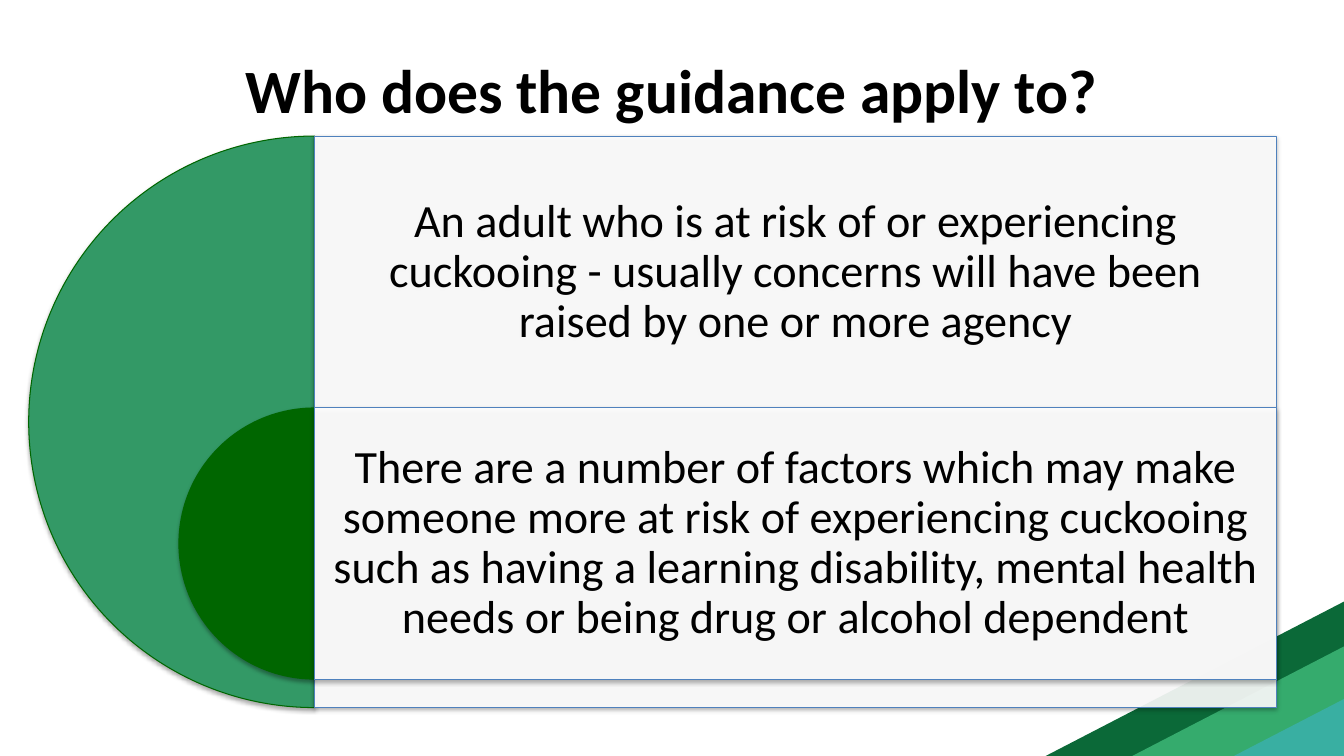
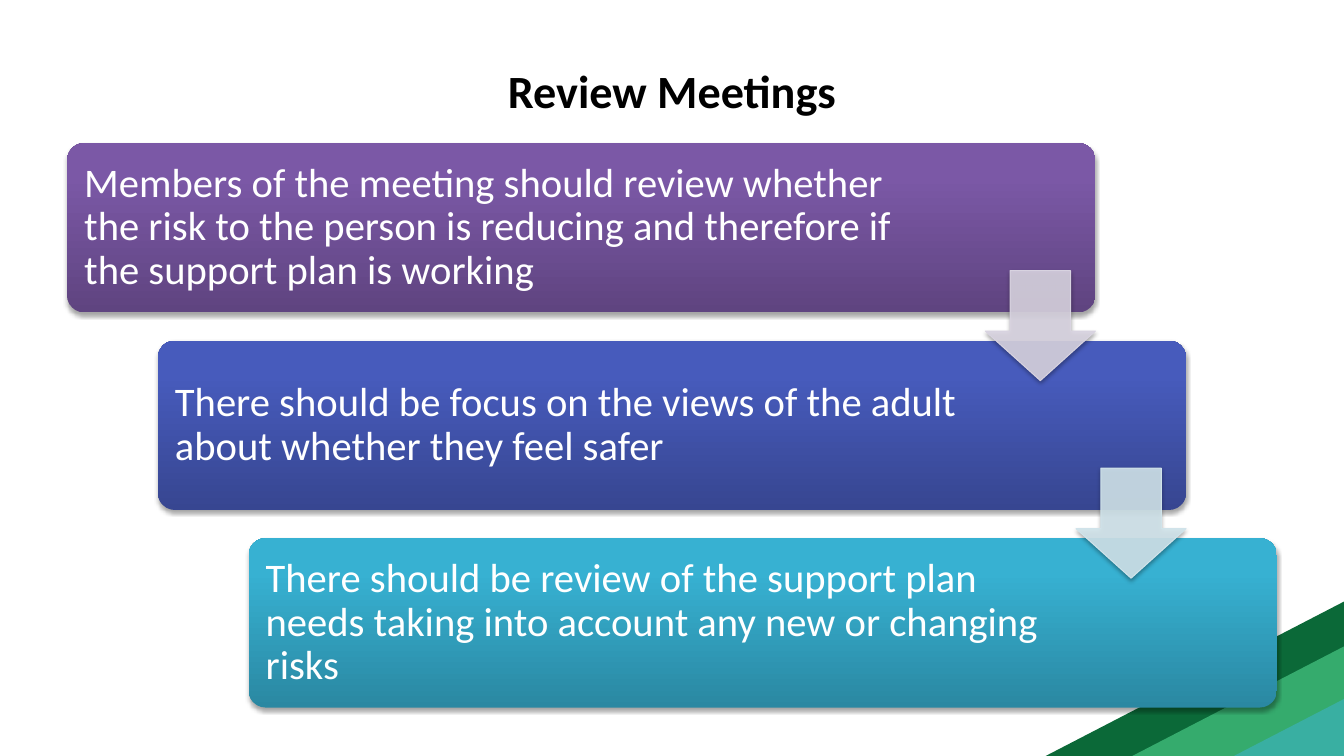
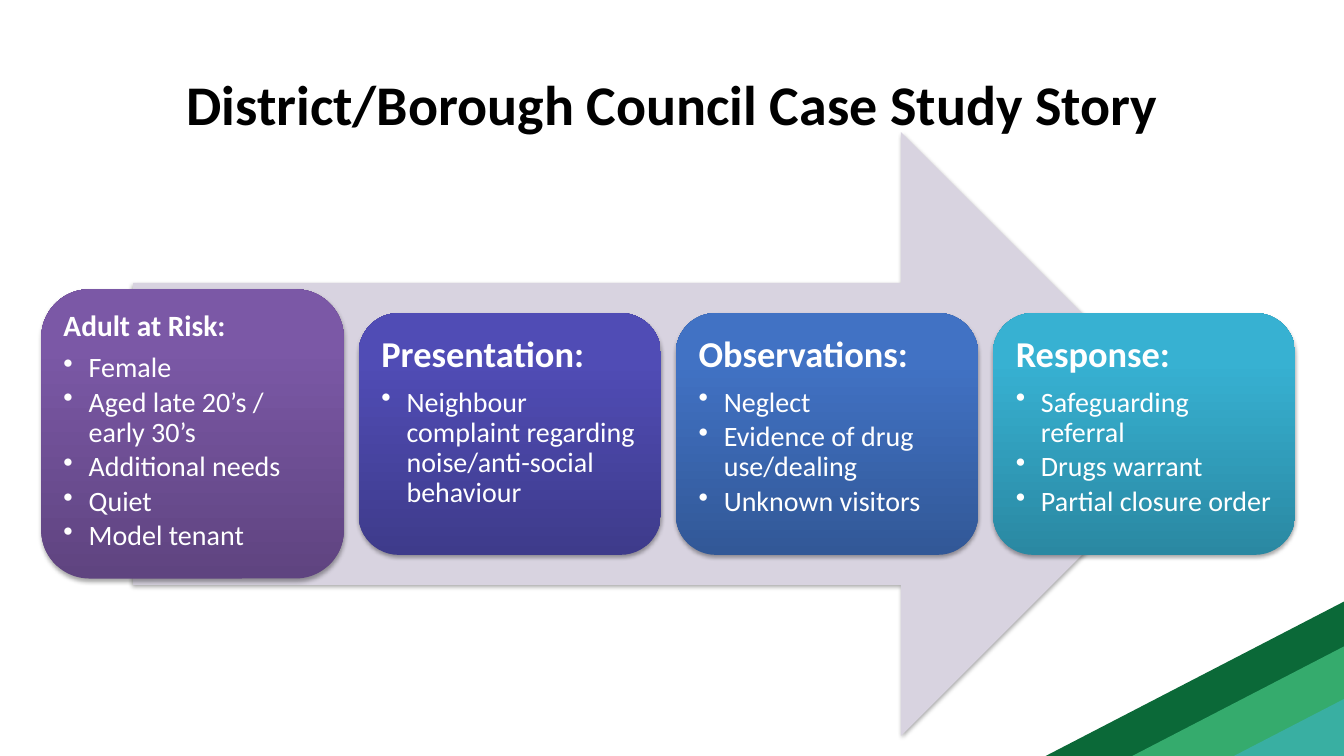
from lxml import etree
from pptx import Presentation
from pptx import util as u
from pptx.dml.color import RGBColor
from pptx.enum import shapes, text
from pptx.oxml.ns import qn

COLOURS = {
    "white": "FFFFFF", "black": "000000", "outline": "4F81BD",
    "forest": "0B6938", "leaf": "35AB6D", "teal": "39AFA2",
    "sea": "339966", "deep": "006600",
    "lilac": "D8D3E0", "ice": "D0E3EA",
    "purple": "7B58A6", "purple_dark": "5F4480",
    "indigo": "504CB5", "indigo_dark": "3E3B8B",
    "royal": "475BBC", "royal_dark": "374691",
    "blue": "4172C4", "blue_dark": "325897",
    "cyan": "37B1D2", "cyan_dark": "2A88A2",
}
FONT = "Calibri"
WIDTH, HEIGHT = u.Inches(13.333), u.Inches(7.5)
ASPECT = HEIGHT / WIDTH
SHAPE = shapes.MSO_SHAPE
ALIGN = text.PP_ALIGN
ANCHOR = text.MSO_ANCHOR


def rgb(name):
    return RGBColor.from_string(COLOURS[name])


def child(parent, tag, **attributes):
    element = etree.SubElement(parent, qn(tag))
    for key, value in attributes.items():
        element.set(key, str(value))
    return element


class Deck:
    def __init__(self):
        self.prs = Presentation()
        self.prs.slide_width, self.prs.slide_height = WIDTH, HEIGHT
        self.layout = self.prs.slide_layouts.get_by_name("Title Only")
        self.s = None

    def box(self, x, y, w, h):
        return [int(v * full / 100) for v, full in zip((x, y, w, h), (WIDTH, HEIGHT) * 2)]

    def slide(self, title, size, top=4):
        first = self.s is None
        self.s = self.prs.slides.add_slide(self.layout)
        if first:
            self.corner()
        sp = self.s.shapes.title
        sp.left, sp.top, sp.width, sp.height = self.box(5, top, 90, 16.67)
        tf = sp.text_frame
        tf.text = title
        tf.auto_size = text.MSO_AUTO_SIZE.NONE
        tf.vertical_anchor = ANCHOR.MIDDLE
        self.style(tf.paragraphs[0], size, "black", True, ALIGN.CENTER)

    def corner(self):
        for width, colour in ((22.2, "forest"), (15.75, "leaf"), (8.2, "teal")):
            rise = width * 0.92
            x, y, w, h = self.box(100 - width, 100 - rise, width, rise)
            outline = self.s.shapes.build_freeform(x, y + h)
            outline.add_line_segments([(x + w, y), (x + w, y + h)])
            sp = outline.convert_to_shape()
            self.paint(sp, colour)
            sp.shadow.inherit = False
            self.layout.shapes._spTree.append(sp._element)

    def paint(self, sp, fill, line=None, alpha=None):
        sp.fill.solid()
        sp.fill.fore_color.rgb = rgb(fill)
        if alpha:
            child(sp._element.spPr.find(".//" + qn("a:srgbClr")), "a:alpha", val=alpha * 1000)
        if line:
            sp.line.color.rgb = rgb(line)
            sp.line.width = u.Pt(0.75)
        else:
            sp.line.fill.background()

    def shape(self, kind, area, fill, line=None, alpha=None, adjust=()):
        sp = self.s.shapes.add_shape(kind, *self.box(*area))
        for i, value in enumerate(adjust):
            sp.adjustments[i] = value
        self.paint(sp, fill, line, alpha)
        sp.shadow.inherit = False
        shadow = child(sp._element.spPr.find(qn("a:effectLst")), "a:outerShdw",
                       blurRad=u.Pt(3.1), dist=u.Pt(1.8), dir=5400000, rotWithShape=0)
        child(child(shadow, "a:srgbClr", val=COLOURS["black"]), "a:alpha", val=35000)
        return sp

    def card(self, area, colour, adjust=()):
        sp = self.shape(SHAPE.ROUNDED_RECTANGLE, area, colour, adjust=adjust)
        sp.fill.gradient()
        sp.fill.gradient_angle = 90
        for stop, position, name in zip(sp.fill.gradient_stops, (0, 0.8), (colour + "_dark", colour)):
            stop.position = position
            stop.color.rgb = rgb(name)
        return sp

    def frame(self, sp, inset, anchor, right=None, bottom=None):
        tf = sp.text_frame
        tf.word_wrap = True
        tf.vertical_anchor = anchor
        tf.margin_left = tf.margin_top = u.Inches(inset)
        tf.margin_right = u.Inches(right or inset)
        tf.margin_bottom = u.Inches(bottom or inset)
        return tf

    def style(self, p, size, colour, bold=False, align=ALIGN.LEFT):
        p.alignment = align
        p.line_spacing = 0.9
        p.font.name, p.font.size, p.font.bold = FONT, u.Pt(size), bold
        p.font.color.rgb = rgb(colour)

    def statement(self, tf, words, size, colour, align=ALIGN.LEFT):
        p = tf.paragraphs[0]
        p.text = words
        self.style(p, size, colour, align=align)

    def bullets(self, tf, heading, size, items):
        p = tf.paragraphs[0]
        p.text = heading
        p.space_after = u.Pt(round(size * 0.35, 1))
        self.style(p, size, "white", True)
        for item in items:
            p = tf.add_paragraph()
            p.text = item
            p.level = 1
            pPr = p._p.get_or_add_pPr()
            pPr.set("marL", str(u.Inches(0.25)))
            pPr.set("indent", str(u.Inches(-0.25)))
            child(pPr, "a:buChar", char="•")
            p.space_after = u.Pt(3)
            self.style(p, 20, "white")


def guidance(deck):
    deck.slide("Who does the guidance apply to?", 44)
    edge = 23.4
    panels = (
        (18, 75.6, "sea", "deep", 3.11,
         "An adult who is at risk of or experiencing cuckooing - usually concerns "
         "will have been raised by one or more agency"),
        (53.9, 36, "deep", None, 0.14,
         "There are a number of factors which may make someone more at risk of "
         "experiencing cuckooing such as having a learning disability, mental health "
         "needs or being drug or alcohol dependent"),
    )
    for top, height, colour, rim, bottom, words in panels:
        width = height * ASPECT
        deck.shape(SHAPE.PIE, (edge - width / 2, top, width, height), colour, rim, adjust=(54, 162))
        panel = deck.shape(SHAPE.RECTANGLE, (edge, top, 71.6, height), "white", "outline", 90)
        tf = deck.frame(panel, 0.14, ANCHOR.MIDDLE, bottom=bottom)
        deck.statement(tf, words, 33, "black", ALIGN.CENTER)


def reviews(deck):
    deck.slide("Review Meetings", 33)
    left, top, width, height = 5, 18.93, 76.5, 22.4
    across, down = 6.75, 26.13
    steps = (
        ("purple", 1.83, "Members of the meeting should review whether the risk to the person "
                         "is reducing and therefore if the support plan is working"),
        ("royal", 2.11, "There should be focus on the views of the adult about whether they feel safer"),
        ("cyan", 2.11, "There should be review of the support plan needs taking into account "
                       "any new or changing risks"),
    )
    for i, (colour, right, words) in enumerate(steps):
        area = (left + i * across, top + i * down, width, height)
        tf = deck.frame(deck.card(area, colour, (0.1,)), 0.12, ANCHOR.MIDDLE, right=right)
        deck.statement(tf, words, 29, "white")
    size = 14.55
    for i, colour in enumerate(("lilac", "ice")):
        arrow_left = left + width + i * across - size * ASPECT
        deck.shape(SHAPE.DOWN_ARROW, (arrow_left, 35.8 + i * down, size * ASPECT, size),
                   colour, colour, 90, (0.55, 0.45))


def case_study(deck):
    deck.slide("District/Borough Council Case Study Story", 40, top=5.8)
    middle = 57.4
    deck.shape(SHAPE.RIGHT_ARROW, (9.9, middle - 39.93, 79.6, 79.86), "lilac")
    cards = (
        ("purple", 38.27, 0.08, 21, "Adult at Risk:",
         ("Female", "Aged late 20’s / early 30’s", "Additional needs", "Quiet", "Model tenant")),
        ("indigo", 32, 0.11, 26, "Presentation:",
         ("Neighbour complaint regarding noise/anti-social behaviour",)),
        ("blue", 32, 0.11, 26, "Observations:",
         ("Neglect", "Evidence of drug use/dealing", "Unknown visitors")),
        ("cyan", 32, 0.11, 26, "Response:",
         ("Safeguarding referral", "Drugs warrant", "Partial closure order")),
    )
    for i, (colour, height, inset, size, heading, items) in enumerate(cards):
        sp = deck.card((3.08 + i * 23.6, middle - height / 2, 22.5, height), colour)
        deck.bullets(deck.frame(sp, inset, ANCHOR.TOP), heading, size, items)


def main():
    deck = Deck()
    guidance(deck)
    reviews(deck)
    case_study(deck)
    deck.prs.save("out.pptx")


if __name__ == "__main__":
    main()
